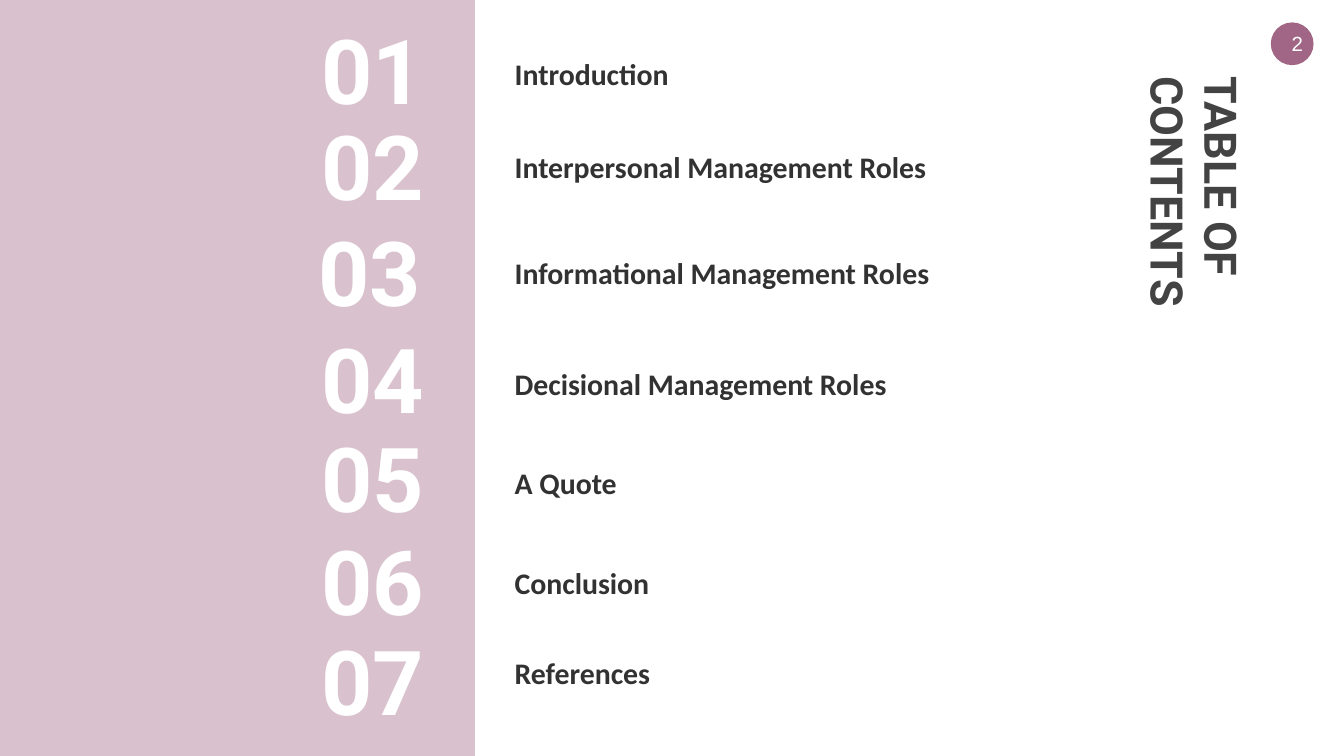
from dataclasses import dataclass

from pptx import Presentation
from pptx.dml.color import RGBColor
from pptx.enum.shapes import MSO_SHAPE
from pptx.enum.text import MSO_ANCHOR, MSO_AUTO_SIZE, PP_ALIGN
from pptx.util import Pt


@dataclass(frozen=True)
class Theme:
    panel: RGBColor = RGBColor(0xD9, 0xC2, 0xCE)
    badge: RGBColor = RGBColor(0xA1, 0x66, 0x85)
    title: RGBColor = RGBColor(0x43, 0x43, 0x43)
    label: RGBColor = RGBColor(0x32, 0x32, 0x32)
    light: RGBColor = RGBColor(0xFF, 0xFF, 0xFF)
    heading_font: str = "Roboto"
    label_font: str = "Calibri"
    badge_font: str = "Arial"
    title_size: int = 24
    number_size: int = 48
    label_size: int = 16
    badge_size: int = 11


THEME = Theme()
SLIDE_WIDTH, SLIDE_HEIGHT = 720, 405
PANEL_WIDTH = 254
NUMBER_HEIGHT, LABEL_HEIGHT = 28, 45.4

# Entry, left and top of its number, top of its label
CONTENTS = [
    ("Introduction", 164.9, 23, 10.8),
    ("Interpersonal Management Roles", 164.9, 74.2, 60.5),
    ("Informational Management Roles", 163.4, 131, 117.4),
    ("Decisional Management Roles", 164.9, 188.6, 177.1),
    ("A Quote", 164.9, 241.2, 229.7),
    ("Conclusion", 164.9, 296.6, 283.7),
    ("References", 164.9, 349.9, 331.9),
]


def write(shape, text, font_name, size, color, bold=True,
          anchor=MSO_ANCHOR.MIDDLE, align=PP_ALIGN.LEFT):
    frame = shape.text_frame
    frame.text = text
    frame.word_wrap = True
    frame.auto_size = MSO_AUTO_SIZE.NONE
    frame.vertical_anchor = anchor
    frame.margin_left = frame.margin_right = Pt(7.2)
    frame.margin_top = frame.margin_bottom = Pt(7.2)
    paragraph = frame.paragraphs[0]
    paragraph.alignment = align
    font = paragraph.font
    font.name, font.size, font.bold = font_name, Pt(size), bold
    font.color.rgb = color


def add_filled(slide, kind, box, color, line_width):
    shape = slide.shapes.add_shape(kind, *map(Pt, box))
    shape.shadow.inherit = False
    shape.fill.solid()
    shape.fill.fore_color.rgb = color
    shape.line.color.rgb = color
    shape.line.width = Pt(line_width)
    return shape


def place_title(slide, box):
    title = slide.shapes.title
    title.left, title.top, title.width, title.height = map(Pt, box)
    title.rotation = 90
    write(title, "TABLE OF CONTENTS", THEME.heading_font, THEME.title_size,
          THEME.title)


def add_contents(slide, box):
    """Fill the box with the colour panel's numbers and their labels."""
    left, top, width, height = box
    add_filled(slide, MSO_SHAPE.RECTANGLE, (left, top, PANEL_WIDTH, height),
               THEME.panel, 0.75)
    label_left = left + PANEL_WIDTH + 14.6
    for index, (entry, number_left, number_top, label_top) in enumerate(CONTENTS, 1):
        number = slide.shapes.add_textbox(
            Pt(left + number_left), Pt(top + number_top), Pt(118), Pt(NUMBER_HEIGHT))
        write(number, f"{index:02d}", THEME.heading_font, THEME.number_size,
              THEME.light)
        label = slide.shapes.add_textbox(
            Pt(label_left), Pt(top + label_top),
            Pt(left + width - label_left), Pt(LABEL_HEIGHT))
        write(label, entry, THEME.label_font, THEME.label_size, THEME.label,
              anchor=MSO_ANCHOR.BOTTOM)


def add_page_badge(slide, box):
    badge = add_filled(slide, MSO_SHAPE.OVAL, box, THEME.badge, 2)
    write(badge, "2", THEME.badge_font, THEME.badge_size, THEME.light,
          bold=False, align=PP_ALIGN.CENTER)


def main():
    presentation = Presentation()
    presentation.slide_width = Pt(SLIDE_WIDTH)
    presentation.slide_height = Pt(SLIDE_HEIGHT)
    slide = presentation.slides.add_slide(presentation.slide_layouts[5])
    place_title(slide, (525.6, 129.6, 229.7, 38.2))
    add_contents(slide, (0, 0, 561, SLIDE_HEIGHT))
    add_page_badge(slide, (681.8, 13, 20.9, 20.9))
    presentation.save("out.pptx")


if __name__ == "__main__":
    main()
